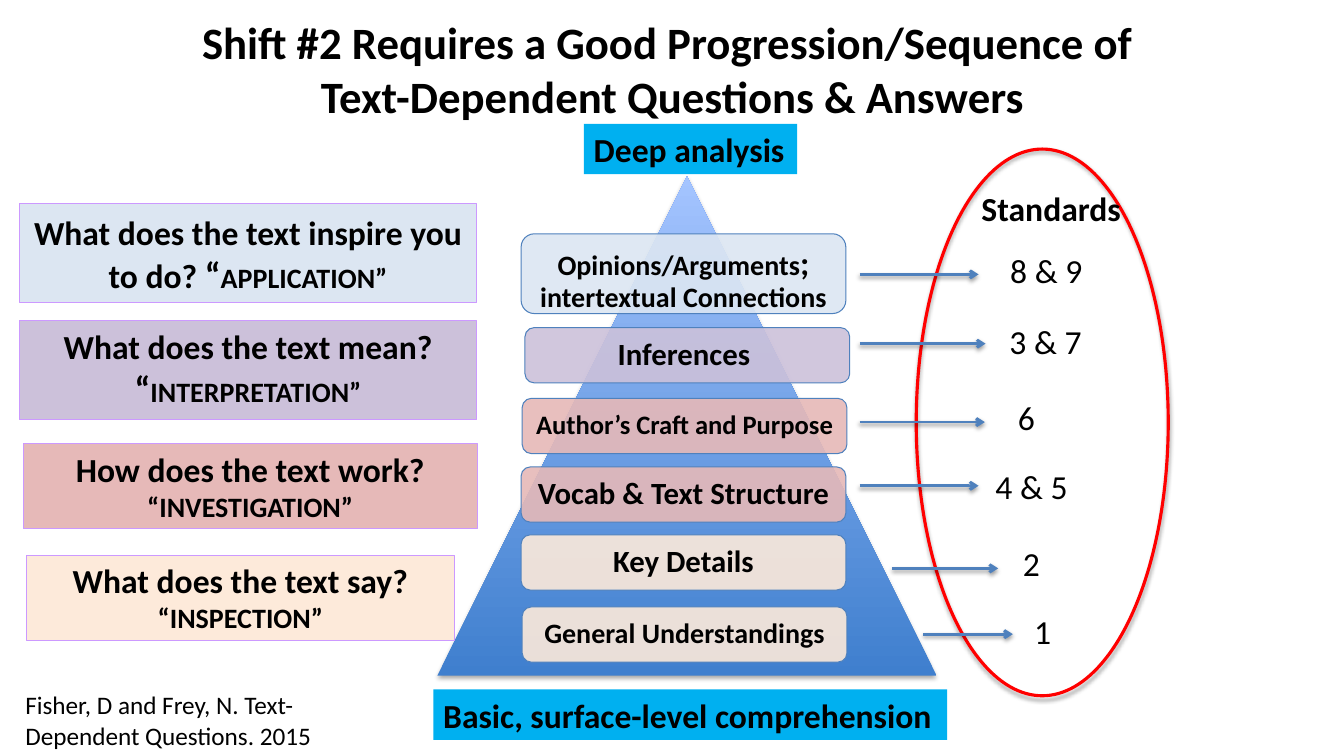
import pptx
import pptx.dml.color
import pptx.enum.shapes
import pptx.enum.text
import pptx.oxml.ns
import pptx.util
from dataclasses import dataclass
from lxml import etree

Pt = pptx.util.Pt
qn = pptx.oxml.ns.qn
MSO = pptx.enum.shapes.MSO_SHAPE
LEFT = pptx.enum.text.PP_ALIGN.LEFT
CENTER = pptx.enum.text.PP_ALIGN.CENTER
TOP = pptx.enum.text.MSO_ANCHOR.TOP
MIDDLE = pptx.enum.text.MSO_ANCHOR.MIDDLE


@dataclass(frozen=True)
class Theme:
    font: str = "Calibri"
    text: str = "000000"
    blue: str = "4F81BD"
    cyan: str = "00B0F0"
    red: str = "FF0000"
    lilac: str = "CC99FF"
    pyramid: tuple = ("3F7FCE", "A4C4FF")
    application: str = "DCE6F2"
    interpretation: str = "CCC1DA"
    investigation: str = "E6B9B8"
    inspection: str = "FDEADA"
    title: float = 32
    quote: float = 26
    body: float = 24
    level: float = 22
    small: float = 20
    tight: float = 19
    source: float = 18


class Deck:
    def __init__(self, prs, theme):
        self.theme = theme
        self.slide = prs.slides.add_slide(prs.slide_layouts[6])

    def color(self, value):
        return pptx.dml.color.RGBColor.from_string(value)

    def shadow(self, effects, opacity):
        sh = etree.SubElement(effects, qn("a:outerShdw"), blurRad=str(Pt(3.1)),
                              dist=str(Pt(1.8)), dir="5400000", rotWithShape="0")
        clr = etree.SubElement(sh, qn("a:srgbClr"), val="000000")
        etree.SubElement(clr, qn("a:alpha"), val=str(opacity * 1000))

    def shape(self, kind, box, fill=None, line=None, width=0.75, opacity=100, shadow=False):
        sp = self.slide.shapes.add_shape(kind, *map(Pt, box))
        sp.shadow.inherit = False
        if isinstance(fill, tuple):
            sp.fill.gradient()
            sp.fill.gradient_angle = 90
            for stop, value in zip(sp.fill.gradient_stops, fill):
                stop.color.rgb = self.color(value)
        elif fill:
            sp.fill.solid()
            sp.fill.fore_color.rgb = self.color(fill)
            if opacity < 100:
                clr = sp.element.spPr.find(qn("a:solidFill"))[0]
                etree.SubElement(clr, qn("a:alpha"), val=str(opacity * 1000))
        else:
            sp.fill.background()
        if line:
            sp.line.color.rgb = self.color(line)
            sp.line.width = Pt(width)
        else:
            sp.line.fill.background()
        if shadow:
            self.shadow(sp.element.spPr.find(qn("a:effectLst")), 35)
        return sp

    def put_text(self, sp, paragraphs, bold=True, align=LEFT, anchor=TOP, wrap=True,
                 spacing=None, insets=(7.2, 3.6, 7.2, 3.6)):
        """Each paragraph is a list of (text, size) runs."""
        tf = sp.text_frame
        tf.word_wrap = wrap
        tf.vertical_anchor = anchor
        tf.margin_left, tf.margin_top, tf.margin_right, tf.margin_bottom = map(Pt, insets)
        for i, runs in enumerate(paragraphs):
            p = tf.add_paragraph() if i else tf.paragraphs[0]
            p.alignment = align
            p.line_spacing = spacing
            for j, (text, size) in enumerate(runs):
                if j:
                    p.add_run().text = text
                    new_runs = p.runs[-1:]
                else:
                    p.text = text
                    new_runs = p.runs
                for r in new_runs:
                    r.font.name = self.theme.font
                    r.font.size = Pt(size)
                    r.font.bold = bold
                    r.font.color.rgb = self.color(self.theme.text)

    def textbox(self, box, paragraphs, **style):
        self.put_text(self.slide.shapes.add_textbox(*map(Pt, box)), paragraphs, **style)

    def label(self, box, text):
        sp = self.shape(MSO.RECTANGLE, box, self.theme.cyan)
        self.put_text(sp, [[(text, self.theme.body)]], wrap=False)

    def card(self, box, fill, paragraphs):
        sp = self.shape(MSO.RECTANGLE, box, fill, self.theme.lilac)
        self.put_text(sp, paragraphs, align=CENTER)

    def level(self, box, fill, runs, top_inset=0):
        sp = self.shape(MSO.ROUNDED_RECTANGLE, box, fill, self.theme.blue, opacity=90)
        self.put_text(sp, [runs], align=CENTER, anchor=MIDDLE, spacing=0.9,
                      insets=(5, top_inset, 5, 0))

    def arrow(self, x1, x2, y):
        c = self.slide.shapes.add_connector(
            pptx.enum.shapes.MSO_CONNECTOR.STRAIGHT, Pt(x1), Pt(y), Pt(x2), Pt(y))
        c.line.color.rgb = self.color(self.theme.blue)
        c.line.width = Pt(2)
        props = c.element.spPr
        etree.SubElement(props.find(qn("a:ln")), qn("a:tailEnd"), type="arrow")
        self.shadow(etree.SubElement(props, qn("a:effectLst")), 38)


def main():
    prs = pptx.Presentation()
    prs.slide_width, prs.slide_height = Pt(960), Pt(540)
    t = Theme()
    s = Deck(prs, t)

    # Title
    s.textbox((12, 11.5, 937, 75),
              [[("Shift #2 Requires a Good Progression/Sequence of \v"
                 "Text-Dependent Questions & Answers", t.title)]],
              align=CENTER, anchor=MIDDLE)

    # Pyramid with its levels
    s.shape(MSO.ISOSCELES_TRIANGLE, (312.5, 126, 356.5, 356.5), t.pyramid, shadow=True)
    s.level((372.25, 167, 232, 57), t.application,
            [("Opinions/Arguments", t.small), ("; ", t.body),
             ("intertextual Connections", t.small)], top_inset=9)
    for x, y, fill, text, size in (
            (375, 234, t.interpretation, "Inferences ", t.level),
            (373, 284.5, t.investigation, "Author’s Craft and Purpose", t.tight),
            (372.25, 333.5, t.investigation, "Vocab & Text Structure", t.level),
            (372.25, 382, t.inspection, "Key Details", t.level),
            (373, 433.5, t.inspection, "General Understandings", t.small)):
        s.level((x, y, 232, 39.5), fill, [(text, size)])

    # Labels at the base and the peak
    s.label((309.5, 492.5, 367, 36), "Basic, surface-level comprehension")
    s.label((417, 88.5, 152.5, 36), "Deep analysis")

    # Question cards
    s.card((13.75, 145.5, 327, 70.5), t.application,
           [[("What does the text inspire you", t.body), (" ", t.quote),
             ("to do? ", t.body), ("“", t.quote), ("APPLICATION”", t.small)]])
    s.card((13.75, 229, 327, 70.5), t.interpretation,
           [[("What does the text mean? ", t.body), ("“", t.quote),
             ("INTERPRETATION”", t.small)]])
    s.card((16.5, 317, 324.5, 60.5), t.investigation,
           [[("How does the text work? ", t.body), ("“INVESTIGATION”", t.small)]])
    s.card((18.75, 396.75, 306, 60.5), t.inspection,
           [[("What does the text say?", t.body)], [("“INSPECTION”", t.small)]])

    # Standards oval
    s.shape(MSO.OVAL, (654.5, 106.5, 180, 390.5), line=t.red, width=2.25, shadow=True)
    s.textbox((694, 131, 116, 36), [[("Standards", t.body)]], wrap=False)

    # Arrows to the standard numbers
    for x1, x2, y, left, top, width, text in (
            (614, 699, 196, 714.5, 175, 66, "8 & 9"),
            (614, 704, 245.5, 714, 226, 66, "3 & 7"),
            (614, 703.5, 301.5, 720, 280, 52, "6"),
            (614, 699, 347, 704, 329, 66, "4 & 5"),
            (637, 713, 406, 723.5, 384, 27, "2"),
            (659.5, 723.5, 453, 731.5, 433, 27, "1")):
        s.arrow(x1, x2, y)
        s.textbox((left, top, width, 36), [[(text, t.body)]], bold=False, wrap=False)

    # Source
    s.textbox((11, 489, 229, 51),
              [[("Fisher, D and Frey, N. Text-Dependent Questions. 2015", t.source)]],
              bold=False)

    prs.save("out.pptx")


if __name__ == "__main__":
    main()
